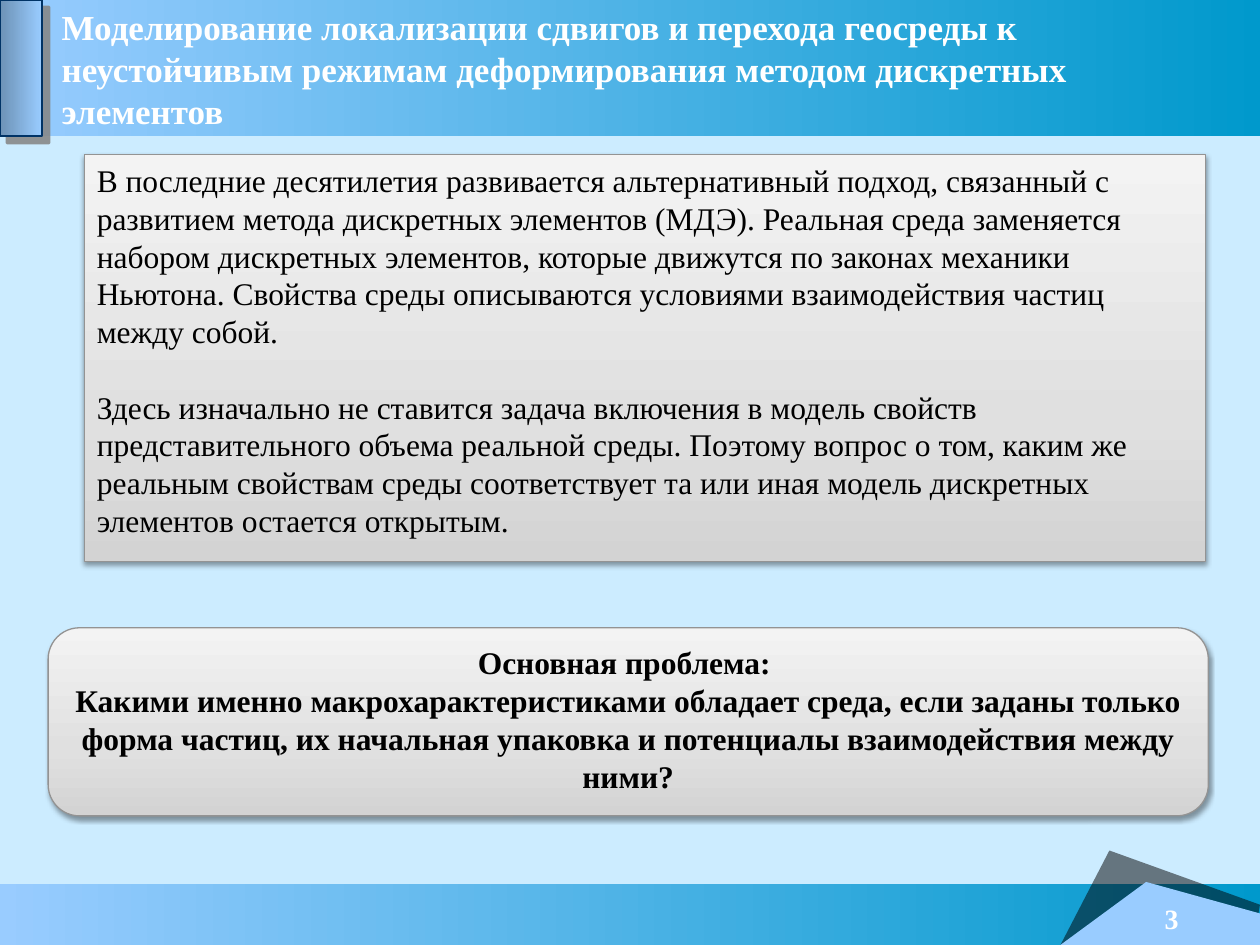
from lxml import etree
from pptx import Presentation
from pptx.dml.color import RGBColor
from pptx.enum import shapes, text
from pptx.oxml import ns
from pptx.util import Pt

WHITE = RGBColor(0xFF, 0xFF, 0xFF)
BLACK = RGBColor(0x00, 0x00, 0x00)
PALE = RGBColor(0xCC, 0xEC, 0xFF)
SKY = RGBColor(0x99, 0xCC, 0xFF)
TEAL = RGBColor(0x00, 0x99, 0xCC)
STEEL = RGBColor(0x6D, 0x92, 0xB6)
NAVY = RGBColor(0x00, 0x33, 0x66)
GREY = RGBColor(0x93, 0x93, 0x93)
SHADE = RGBColor(0x86, 0x86, 0x86)
PANEL_STOPS = [(0, RGBColor(0xD3, 0xD3, 0xD3)), (35, RGBColor(0xE0, 0xE0, 0xE0)),
               (100, RGBColor(0xF3, 0xF3, 0xF3))]
BAND_STOPS = [(0, SKY), (100, TEAL)]
FONT = "Times New Roman"

TITLE = ("Моделирование локализации сдвигов и перехода геосреды к неустойчивым "
         "режимам деформирования методом дискретных элементов")
APPROACH = [
    "В последние десятилетия развивается альтернативный подход, связанный с развитием "
    "метода дискретных элементов (МДЭ). Реальная среда заменяется набором дискретных "
    "элементов, которые движутся по законах механики Ньютона. Свойства среды описываются "
    "условиями взаимодействия частиц между собой.",
    "Здесь изначально не ставится задача включения в модель свойств представительного "
    "объема реальной среды. Поэтому вопрос о том, каким же реальным свойствам среды "
    "соответствует та или иная модель дискретных элементов остается открытым.",
]
PROBLEM = [
    "Основная проблема: ",
    "Какими именно макрохарактеристиками обладает среда, если заданы только форма частиц, "
    "их начальная упаковка и потенциалы взаимодействия между ними?",
]
PAGE = "3"

WIDTH, HEIGHT = 720, 540
HEADER_H = 77.75
FOOTER_TOP = 505.25
DARK_PEAK = [(634.25, 486), (WIDTH, 517), (715.5, HEIGHT), (606, HEIGHT)]
LIGHT_PEAK = [(606, HEIGHT), (655.25, 504), (WIDTH, 522.5), (WIDTH, HEIGHT)]


def add(parent, tag, **attributes):
    return etree.SubElement(parent, ns.qn(tag),
                            {key: str(value) for key, value in attributes.items()})


def add_color(parent, color, alpha=100):
    add(add(parent, "a:srgbClr", val=color), "a:alpha", val=alpha * 1000)


def add_block(box, stops, angle=0, kind=shapes.MSO_SHAPE.RECTANGLE, line=None, shadow=None):
    """Gradient shape; line is (color, width), shadow (color, alpha, blur, distance, angle)."""
    block = slide.shapes.add_shape(kind, *map(Pt, box))
    block.shadow.inherit = False
    if line:
        block.line.color.rgb, block.line.width = line[0], Pt(line[1])
    else:
        block.line.fill.background()
    properties = block.fill._xPr
    gradient = etree.Element(ns.qn("a:gradFill"), rotWithShape="1")
    stop_list = add(gradient, "a:gsLst")
    for position, color in stops:
        add_color(add(stop_list, "a:gs", pos=position * 1000), color)
    add(gradient, "a:lin", ang=angle * 60000, scaled=0)
    properties.find(ns.qn("a:prstGeom")).addnext(gradient)
    if shadow:
        color, alpha, blur, distance, direction = shadow
        outer = add(properties.find(ns.qn("a:effectLst")), "a:outerShdw",
                    blurRad=Pt(blur), dist=Pt(distance), dir=direction * 60000,
                    algn="ctr", rotWithShape=0)
        add_color(outer, color, alpha)
    return block


def add_peak(points, color, alpha=100):
    builder = slide.shapes.build_freeform(*points[0], scale=Pt(1))
    builder.add_line_segments(points[1:], close=True)
    peak = builder.convert_to_shape()
    peak.shadow.inherit = False
    peak.line.fill.background()
    peak.fill.solid()
    peak.fill.fore_color.rgb = color
    add(peak.fill._xPr.find(f".//{ns.qn('a:srgbClr')}"), "a:alpha", val=alpha * 1000)


def write(holder, paragraphs, size, color, bold=False, align=text.PP_ALIGN.LEFT,
          anchor=text.MSO_ANCHOR.TOP, wrap=True, gap=0):
    frame = holder.text_frame
    frame.text = "\n".join(paragraphs)
    frame_format = {"word_wrap": wrap, "vertical_anchor": anchor,
                    "auto_size": text.MSO_AUTO_SIZE.NONE}
    for name, value in frame_format.items():
        setattr(frame, name, value)
    font_format = {"name": FONT, "size": Pt(size), "bold": bold}
    for number, paragraph in enumerate(frame.paragraphs):
        paragraph.alignment = align
        paragraph.space_before = Pt(gap if number else 0)
        for run in paragraph.runs:
            for name, value in font_format.items():
                setattr(run.font, name, value)
            run.font.color.rgb = color


deck = Presentation()
deck.slide_width, deck.slide_height = Pt(WIDTH), Pt(HEIGHT)
slide = deck.slides.add_slide(deck.slide_layouts[5])
slide.background.fill.solid()
slide.background.fill.fore_color.rgb = PALE

add_block((0, FOOTER_TOP, WIDTH, HEIGHT - FOOTER_TOP), BAND_STOPS)
add_peak(DARK_PEAK, BLACK, alpha=50)
add_peak(LIGHT_PEAK, SKY)
add_block((0, 0, WIDTH, HEADER_H), BAND_STOPS)
add_block((0, 0, 24, HEADER_H), [(0, STEEL), (100, SKY)],
          line=(NAVY, 1.5), shadow=(SHADE, 88, 0, 5.7, 45))

page_number = slide.shapes.add_textbox(*map(Pt, (631.5, 510, 76, 29)))
write(page_number, [PAGE], 16, WHITE, bold=True, align=text.PP_ALIGN.CENTER,
      anchor=text.MSO_ANCHOR.MIDDLE, wrap=False)

title = slide.shapes.title
for side, length in zip(("left", "top", "width", "height"), (28, 15, 638, 64)):
    setattr(title, side, Pt(length))
write(title, [TITLE], 20, WHITE, bold=True, anchor=text.MSO_ANCHOR.BOTTOM)
slide.shapes._spTree.append(title._element)  # bring the title in front of the header band

panel = {"stops": PANEL_STOPS, "angle": 270, "line": (GREY, 0.75),
         "shadow": (BLACK, 38, 3.1, 1.6, 90)}
problem = add_block((27.5, 358.75, 663, 107.5), kind=shapes.MSO_SHAPE.ROUNDED_RECTANGLE, **panel)
write(problem, PROBLEM, 18, BLACK, bold=True, align=text.PP_ALIGN.CENTER)
approach = add_block((48.25, 88.5, 640.75, 232.5), **panel)
write(approach, APPROACH, 18, BLACK, gap=21.5)

deck.save("out.pptx")
